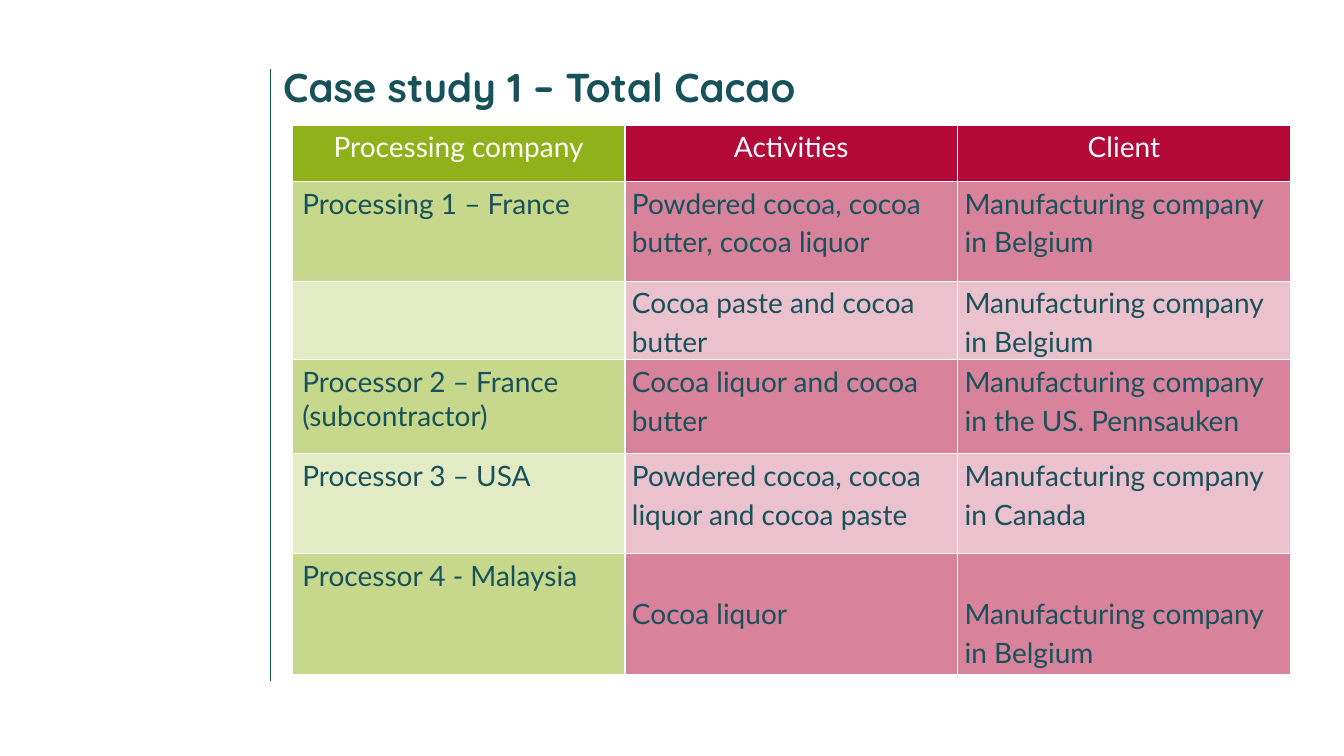
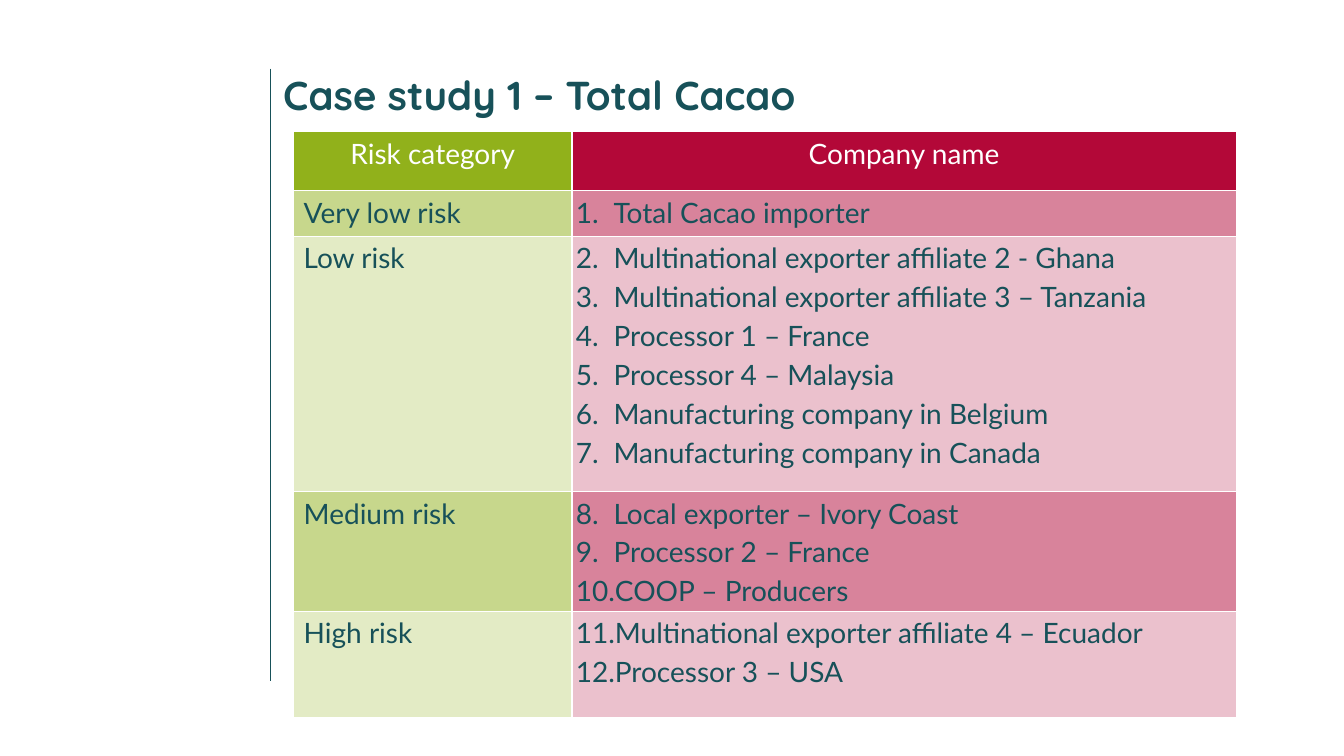
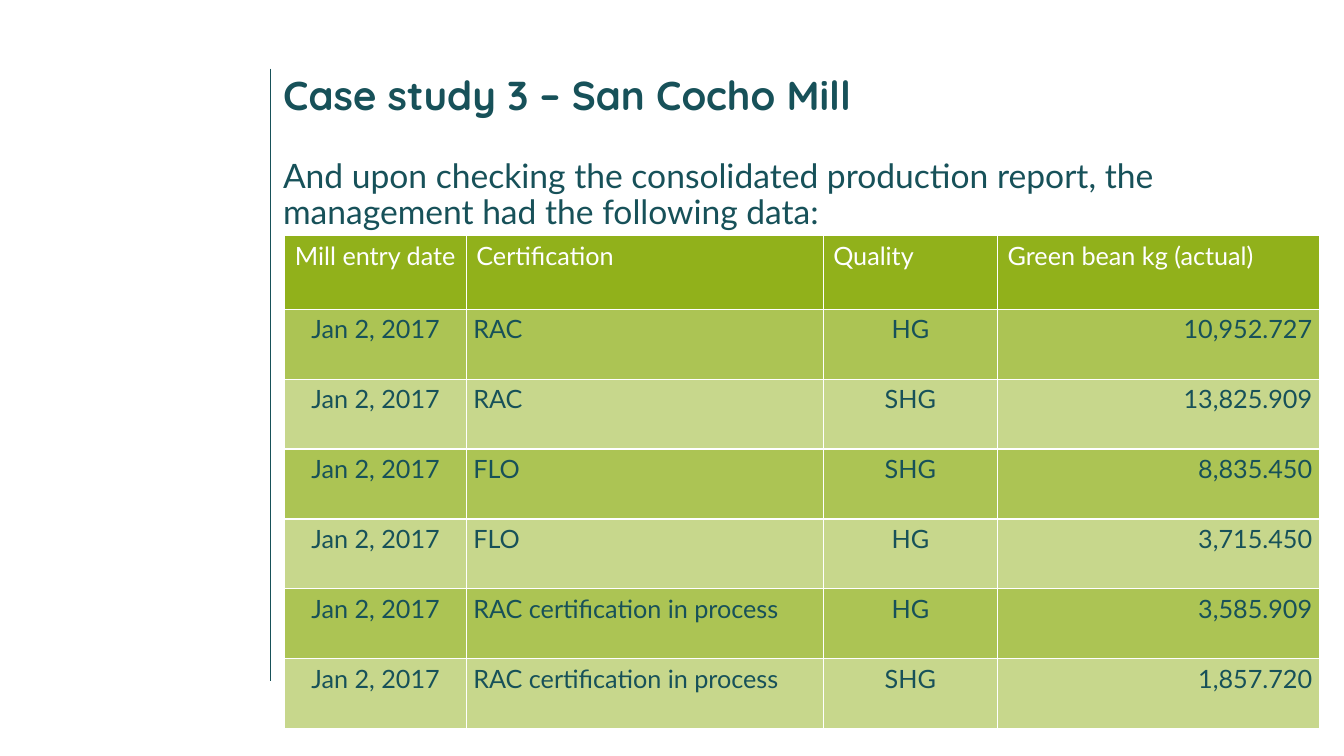
from dataclasses import dataclass, field

from lxml.etree import SubElement
from pptx import Presentation
from pptx.dml.color import RGBColor
from pptx.enum.shapes import MSO_CONNECTOR
from pptx.enum.text import MSO_ANCHOR, MSO_AUTO_SIZE, PP_ALIGN
from pptx.oxml.ns import qn
from pptx.slide import Slide
from pptx.table import _Cell
from pptx.text.text import TextFrame, _Paragraph
from pptx.util import Pt


@dataclass(frozen=True)
class Theme:
    ink: str = "175159"
    green: str = "91B11B"
    red: str = "B30838"
    white: str = "FFFFFF"
    heading_font: str = "Quicksand"
    body_font: str = "Lato"
    title_size: float = 28.8
    lead_size: float = 24
    table_size: float = 20
    data_size: float = 18
    rule_width: float = 0.5
    border_width: float = 1


THEME = Theme()
LEFT, CENTER, RIGHT = PP_ALIGN.LEFT, PP_ALIGN.CENTER, PP_ALIGN.RIGHT


@dataclass(frozen=True)
class Numbered:
    start: int
    items: tuple[str, ...]


@dataclass(frozen=True)
class Column:
    heading: str
    width: float
    color: str = THEME.green
    align: PP_ALIGN = LEFT
    line_spacing: float = 1.15
    margins: dict[str, float] = field(default_factory=dict)


@dataclass(frozen=True)
class Row:
    height: float
    cells: tuple[str | Numbered, ...]
    text_drop: float = 0


@dataclass(frozen=True)
class TableSpec:
    left: float
    top: float
    header_height: float
    columns: tuple[Column, ...]
    rows: tuple[Row, ...]
    bands: tuple[int, int] = (50, 25)
    size: float = THEME.table_size
    header_align: PP_ALIGN = CENTER


def margins(side: float, top: float = 0, bottom: float = 0) -> dict[str, float]:
    return {"margin_left": side, "margin_top": top,
            "margin_right": side, "margin_bottom": bottom}


DEFAULT_MARGINS = margins(7.2, 3.6, 3.6)
SNUG = margins(5)
TIGHT = margins(2.7)


def set_margins(target: TextFrame | _Cell, values: dict[str, float]) -> None:
    for name, value in values.items():
        setattr(target, name, Pt(value))


def write(p: _Paragraph, text: str, size: float, color: str = THEME.ink,
          font: str = THEME.body_font, bold: bool = False) -> None:
    r = p.add_run()
    r.text = text
    for name, value in {"name": font, "size": Pt(size), "bold": bold}.items():
        setattr(r.font, name, value)
    r.font.color.rgb = RGBColor.from_string(color)


def number(p: _Paragraph, start: int) -> None:
    """Give the paragraph an automatic number with a hanging indent."""
    pPr = p._p.get_or_add_pPr()
    pPr.set("marL", str(Pt(27)))
    pPr.set("indent", str(-Pt(27)))
    SubElement(pPr, qn("a:buFont"), typeface="+mj-lt")
    SubElement(pPr, qn("a:buAutoNum"), type="arabicPeriod", startAt=str(start))


def paint(cell: _Cell, color: str, opacity: int = 100) -> None:
    """Draw the cell's white borders and its fill, opacity in percent."""
    tcPr = cell._tc.get_or_add_tcPr()
    for side in "LRTB":
        ln = SubElement(tcPr, qn(f"a:ln{side}"), w=str(Pt(THEME.border_width)))
        SubElement(SubElement(ln, qn("a:solidFill")), qn("a:srgbClr"), val=THEME.white)
    cell.fill.solid()
    cell.fill.fore_color.rgb = RGBColor.from_string(color)
    if opacity < 100:
        clr = tcPr.find(f"{qn('a:solidFill')}/{qn('a:srgbClr')}")
        SubElement(clr, qn("a:alpha"), val=str(opacity * 1000))


def fill_cell(cell: _Cell, content: str | Numbered, column: Column, size: float) -> None:
    items = content.items if isinstance(content, Numbered) else (content,)
    tf = cell.text_frame
    for i, text in enumerate(items):
        p = tf.add_paragraph() if i else tf.paragraphs[0]
        p.alignment = column.align
        p.line_spacing = column.line_spacing
        if isinstance(content, Numbered):
            number(p, content.start)
        if text:
            write(p, text, size)


def add_table(s: Slide, table: TableSpec) -> None:
    heights = [table.header_height, *(row.height for row in table.rows)]
    width = sum(column.width for column in table.columns)
    tbl = s.shapes.add_table(len(heights), len(table.columns), Pt(table.left),
                             Pt(table.top), Pt(width), Pt(sum(heights))).table
    tbl.first_row = tbl.horz_banding = False
    for row, height in zip(tbl.rows, heights):
        row.height = Pt(height)

    for c, column in enumerate(table.columns):
        tbl.columns[c].width = Pt(column.width)
        header = tbl.cell(0, c)
        paint(header, column.color)
        p = header.text_frame.paragraphs[0]
        p.alignment = table.header_align
        write(p, column.heading, table.size, THEME.white)
        for i, row in enumerate(table.rows):
            cell = tbl.cell(i + 1, c)
            paint(cell, column.color, table.bands[i % 2])
            set_margins(cell, column.margins)
            if row.text_drop and column.margins:
                cell.margin_top = Pt(row.text_drop)
            fill_cell(cell, row.cells[c], column, table.size)


def add_slide(prs: Presentation, title: str, title_top: float = 46.8) -> Slide:
    """Add a slide with the vertical rule and the title beside it."""
    s = prs.slides.add_slide(prs.slide_layouts[5])
    rule = s.shapes.add_connector(MSO_CONNECTOR.STRAIGHT, Pt(193), Pt(49), Pt(193), Pt(486.7))
    rule.line.color.rgb = RGBColor.from_string(THEME.ink)
    rule.line.width = Pt(THEME.rule_width)
    SubElement(rule._element.spPr, qn("a:effectLst"))

    sp = s.shapes.title
    box = {"left": 195.1, "top": title_top, "width": 725, "height": 29.5}
    for name, value in box.items():
        setattr(sp, name, Pt(value))
    tf = sp.text_frame
    set_margins(tf, DEFAULT_MARGINS)
    tf.auto_size = MSO_AUTO_SIZE.NONE
    tf.vertical_anchor = MSO_ANCHOR.TOP
    tf.word_wrap = True
    p = tf.paragraphs[0]
    p.alignment = LEFT
    write(p, title, THEME.title_size, font=THEME.heading_font, bold=True)
    return s


def add_lead(s: Slide, text: str) -> None:
    tf = s.shapes.add_textbox(Pt(195.1), Pt(110), Pt(661), Pt(59)).text_frame
    tf.word_wrap = True
    p = tf.paragraphs[0]
    p.line_spacing = 0.9
    write(p, text, THEME.lead_size)


PROCESSORS = TableSpec(
    left=208.8, top=89.3, header_height=40.3,
    columns=(
        Column("Processing company", 237.6, line_spacing=1),
        Column("Activities", 237.6, THEME.red, margins=SNUG),
        Column("Client", 237.6, THEME.red, margins=SNUG),
    ),
    rows=(
        Row(71.3, ("Processing 1 – France", "Powdered cocoa, cocoa butter, cocoa liquor",
                   "Manufacturing company in Belgium")),
        Row(56.2, ("", "Cocoa paste and cocoa butter", "Manufacturing company in Belgium")),
        Row(67, ("Processor 2 – France (subcontractor)", "Cocoa liquor and cocoa butter",
                 "Manufacturing company in the US. Pennsauken")),
        Row(71.3, ("Processor 3 – USA", "Powdered cocoa, cocoa liquor and cocoa paste",
                   "Manufacturing company in Canada")),
        Row(86.4, ("Processor 4 - Malaysia", "Cocoa liquor",
                   "Manufacturing company in Belgium"), text_drop=27.6),
    ),
)

RISKS = TableSpec(
    left=209.7, top=93.8, header_height=42.3,
    columns=(
        Column("Risk category", 198.9, line_spacing=1),
        Column("Company name", 474.4, THEME.red, margins=TIGHT),
    ),
    rows=(
        Row(32.6, ("Very low risk", Numbered(1, ("Total Cacao importer",)))),
        Row(182.2, ("Low risk", Numbered(2, (
            "Multinational exporter affiliate 2 - Ghana",
            "Multinational exporter affiliate 3 – Tanzania",
            "Processor 1 – France",
            "Processor 4 – Malaysia",
            "Manufacturing company in Belgium",
            "Manufacturing company in Canada")))),
        Row(85.7, ("Medium risk", Numbered(8, (
            "Local exporter – Ivory Coast", "Processor 2 – France", "COOP – Producers")))),
        Row(76.3, ("High risk", Numbered(11, (
            "Multinational exporter affiliate 4 – Ecuador", "Processor 3 – USA")))),
    ),
)

DELIVERIES = (
    ("RAC", "HG", "10,952.727"),
    ("RAC", "SHG", "13,825.909"),
    ("FLO", "SHG", "8,835.450"),
    ("FLO", "HG", "3,715.450"),
    ("RAC certification in process", "HG", "3,585.909"),
    ("RAC certification in process", "SHG", "1,857.720"),
)

PRODUCTION = TableSpec(
    left=203.5, top=168, header_height=53,
    columns=(
        Column("Mill entry date", 129.6, align=CENTER, margins=SNUG),
        Column("Certification", 254.9, margins=SNUG),
        Column("Quality", 124.6, align=CENTER, margins=SNUG),
        Column("Green bean kg (actual)", 229.7, align=RIGHT, margins=SNUG),
    ),
    rows=tuple(Row(49.9, ("Jan 2, 2017", *delivery)) for delivery in DELIVERIES),
    bands=(75, 50), size=THEME.data_size, header_align=LEFT,
)


def main() -> None:
    prs = Presentation()
    prs.slide_width, prs.slide_height = Pt(960), Pt(540)

    add_table(add_slide(prs, "Case study 1 – Total Cacao", title_top=41), PROCESSORS)
    add_table(add_slide(prs, "Case study 1 – Total Cacao"), RISKS)

    s = add_slide(prs, "Case study 3 – San Cocho Mill")
    add_lead(s, "And upon checking the consolidated production report, "
                "the management had the following data:")
    add_table(s, PRODUCTION)
    prs.save("out.pptx")


if __name__ == "__main__":
    main()
